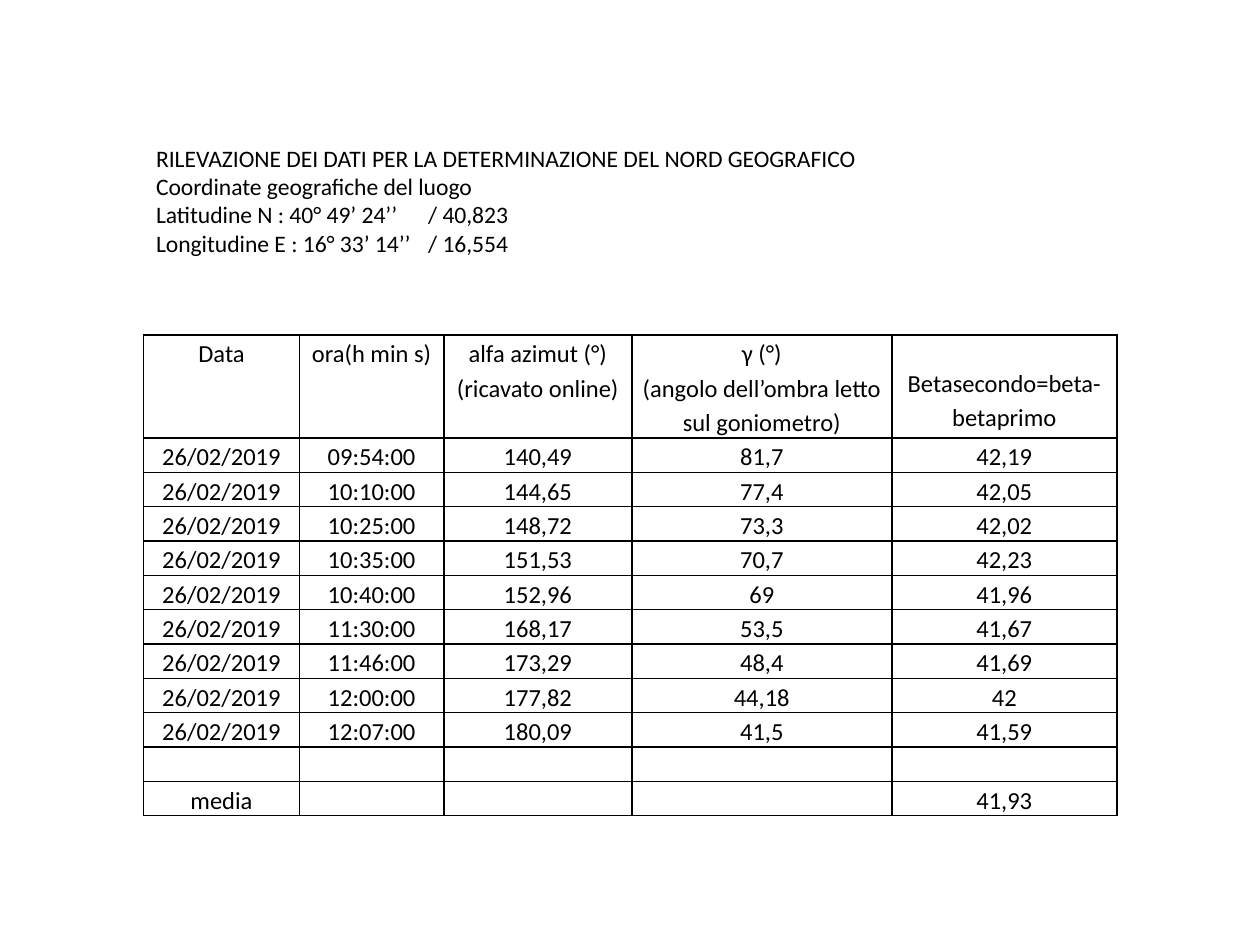
from lxml.etree import SubElement
from pptx import Presentation
from pptx.dml.color import RGBColor
from pptx.enum.text import MSO_AUTO_SIZE, PP_ALIGN
from pptx.oxml.ns import qn
from pptx.util import Pt

COLOURS = {"ink": "000000", "paper": "FFFFFF"}


class Page:
    """Style and current slide, with one method for each kind of element."""

    font = "Calibri"
    line_width = 1
    cell_size = 14

    def __init__(self, deck):
        self.slide = deck.slides.add_slide(deck.slide_layouts[6])

    def add_span(self, para, text, size):
        span = para.add_run()
        span.text = text
        for name, value in {"name": self.font, "size": Pt(size)}.items():
            setattr(span.font, name, value)
        span.font.color.rgb = RGBColor.from_string(COLOURS["ink"])

    def add_text(self, left, top, width, height, lines, size, tab):
        box = self.slide.shapes.add_textbox(Pt(left), Pt(top), Pt(width), Pt(height))
        frame = box.text_frame
        frame.word_wrap = True
        frame.auto_size = MSO_AUTO_SIZE.SHAPE_TO_FIT_TEXT
        for index, line in enumerate(lines):
            para = frame.add_paragraph() if index else frame.paragraphs[0]
            self.add_span(para, line, size)
            if "\t" in line:
                tabs = SubElement(para._p.get_or_add_pPr(), qn("a:tabLst"))
                SubElement(tabs, qn("a:tab"), pos=str(Pt(tab)), algn="l")

    def add_borders(self, cell):
        props = cell._tc.get_or_add_tcPr()
        for index, side in enumerate(("lnL", "lnR", "lnT", "lnB")):
            line = SubElement(props, qn(f"a:{side}"), w=str(Pt(self.line_width)))
            fill = SubElement(line, qn("a:solidFill"))
            SubElement(fill, qn("a:srgbClr"), val=COLOURS["ink"])
            props.insert(index, line)

    def fill_cell(self, cell, text):
        margins = {"margin_left": 4.5, "margin_right": 4.5,
                   "margin_top": 0, "margin_bottom": 0}
        for name, value in margins.items():
            setattr(cell, name, Pt(value))
        cell.fill.solid()
        cell.fill.fore_color.rgb = RGBColor.from_string(COLOURS["paper"])
        self.add_borders(cell)
        frame = cell.text_frame
        for index, line in enumerate(text.split("\n")):
            para = frame.add_paragraph() if index else frame.paragraphs[0]
            para.alignment = PP_ALIGN.CENTER
            para.line_spacing = 1.15
            if line:
                self.add_span(para, line, self.cell_size)
            else:  # keeps an empty cell as low as the others
                SubElement(para._p, qn("a:endParaRPr"), sz=str(self.cell_size * 100))

    def add_table(self, left, top, widths, heights, rows):
        frame = self.slide.shapes.add_table(
            len(rows), len(widths), Pt(left), Pt(top), Pt(sum(widths)), Pt(sum(heights)))
        table = frame.table
        for column, width in zip(table.columns, widths):
            column.width = Pt(width)
        for row, height, texts in zip(table.rows, heights, rows):
            row.height = Pt(height)
            for cell, text in zip(row.cells, texts):
                self.fill_cell(cell, text)
        return table


def main():
    deck = Presentation()
    deck.slide_width, deck.slide_height = Pt(720), Pt(540)
    page = Page(deck)

    # Measurements and their mean
    header = ["Data", "ora(h min s)", "alfa azimut (°)\n(ricavato online)",
              "γ (°)\n(angolo dell’ombra letto sul goniometro)",
              "Betasecondo=beta-betaprimo"]
    readings = [
        ("09:54:00", "140,49", "81,7", "42,19"),
        ("10:10:00", "144,65", "77,4", "42,05"),
        ("10:25:00", "148,72", "73,3", "42,02"),
        ("10:35:00", "151,53", "70,7", "42,23"),
        ("10:40:00", "152,96", "69", "41,96"),
        ("11:30:00", "168,17", "53,5", "41,67"),
        ("11:46:00", "173,29", "48,4", "41,69"),
        ("12:00:00", "177,82", "44,18", "42"),
        ("12:07:00", "180,09", "41,5", "41,59"),
    ]
    rows = [header]
    rows += [("26/02/2019", *reading) for reading in readings]
    rows += [[""] * 5, ["media", "", "", "", "41,93"]]
    heights = [58.3] + [19.6] * (len(rows) - 1)
    table = page.add_table(82.1, 191.5, [89, 82.6, 107.4, 148.6, 128.6], heights, rows)
    table.cell(0, 4).margin_top = Pt(17)  # lowers the last heading

    # Heading and coordinates
    page.add_text(82.1, 78.5, 556.5, 72.7, [
        "RILEVAZIONE DEI DATI PER LA DETERMINAZIONE DEL NORD GEOGRAFICO",
        "Coordinate geografiche del luogo",
        "Latitudine N : 40° 49’ 24’’\t/ 40,823",
        "Longitudine E : 16° 33’ 14’’\t/ 16,554",
    ], size=13.5, tab=155.5)

    deck.save("out.pptx")


if __name__ == "__main__":
    main()
